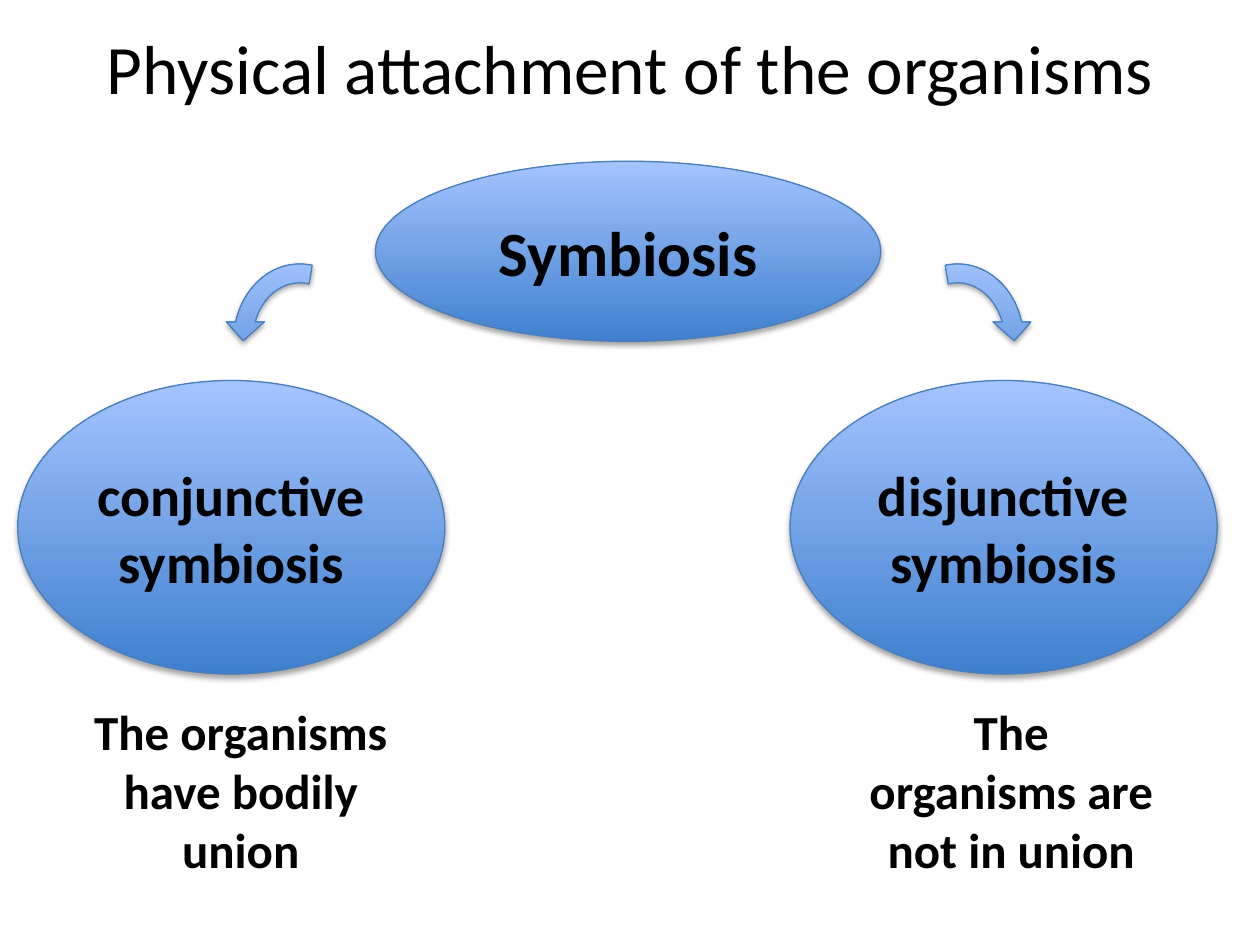
from lxml import etree
from pptx import Presentation
from pptx.dml.color import RGBColor
from pptx.enum.shapes import MSO_SHAPE
from pptx.enum.text import MSO_ANCHOR, PP_ALIGN
from pptx.oxml.ns import qn
from pptx.util import Inches, Pt

OVAL = MSO_SHAPE.OVAL
CIRCULAR_ARROW = MSO_SHAPE.CIRCULAR_ARROW
CENTER = PP_ALIGN.CENTER
MIDDLE = MSO_ANCHOR.MIDDLE
TOP = MSO_ANCHOR.TOP

COLORS = {
    "text": "000000",
    "deep": "3F80CE",
    "light": "A4C4FF",
    "outline": "4B7EBC",
    "shadow": "000000",
}


class SlideBuilder:
    font = "Calibri"
    arrow_bend = (0.125, 11.423, 204.577, 156.404, 0.125)

    def __init__(self, slide):
        self.slide = slide

    def color(self, name):
        return RGBColor.from_string(COLORS[name])

    def label(self, shape, text, size, bold=True, anchor=MIDDLE):
        frame = shape.text_frame
        frame.word_wrap = True
        frame.vertical_anchor = anchor
        para = frame.paragraphs[0]
        para.alignment = CENTER
        span = para.add_run()
        span.text = text
        span.font.name = self.font
        span.font.size = Pt(size)
        span.font.bold = bold
        span.font.color.rgb = self.color("text")

    def shadow(self, shape):
        shape.shadow.inherit = False
        effects = shape._element.spPr.find(qn("a:effectLst"))
        outer = etree.SubElement(
            effects, qn("a:outerShdw"), blurRad=str(Pt(3.1)),
            dist=str(Pt(1.8)), dir="5400000", rotWithShape="0")
        tone = etree.SubElement(outer, qn("a:srgbClr"), val=COLORS["shadow"])
        etree.SubElement(tone, qn("a:alpha"), val="35000")

    def glossy(self, kind, left, top, width, height):
        shape = self.slide.shapes.add_shape(
            kind, Inches(left), Inches(top), Inches(width), Inches(height))
        shape.fill.gradient()
        shape.fill.gradient_angle = 90
        for stop, name in zip(shape.fill.gradient_stops, ("deep", "light")):
            stop.color.rgb = self.color(name)
        shape.line.color.rgb = self.color("outline")
        shape.line.width = Pt(0.75)
        self.shadow(shape)
        return shape

    def ellipse(self, text, size, left, top, width, height):
        self.label(self.glossy(OVAL, left, top, width, height), text, size)

    def arrow(self, left, top, width, height, mirrored):
        shape = self.glossy(CIRCULAR_ARROW, left, top, width, height)
        for index, value in enumerate(self.arrow_bend):
            shape.adjustments[index] = value
        if mirrored:
            shape._element.spPr.xfrm.set("flipH", "1")

    def text(self, text, size, left, top, width, height, bold=True, anchor=TOP):
        box = self.slide.shapes.add_textbox(
            Inches(left), Inches(top), Inches(width), Inches(height))
        self.label(box, text, size, bold, anchor)


def main():
    deck = Presentation()
    deck.slide_width, deck.slide_height = Inches(10), Inches(7.5)
    page = SlideBuilder(deck.slides.add_slide(deck.slide_layouts[6]))

    page.text("Physical attachment of the organisms", 39.6,
              0.5, 0.14, 9, 0.78, bold=False, anchor=MIDDLE)
    page.ellipse("Symbiosis", 36, 2.98, 1.28, 4.01, 1.43)

    branches = (
        ("conjunctive symbiosis", 0.14,
         "The organisms have bodily union", 0.5, 2.82, 1.78, True),
        ("disjunctive symbiosis", 6.27,
         "The organisms are not in union", 6.78, 2.49, 7, False),
    )
    for name, left, note, note_left, note_width, arrow_left, mirrored in branches:
        page.ellipse(name, 32, left, 3.02, 3.39, 2.33)
        page.text(note, 28, note_left, 5.52, note_width, 1.51)
        page.arrow(arrow_left, 2.02, 1.2, 1.37, mirrored)

    deck.save("out.pptx")


if __name__ == "__main__":
    main()
